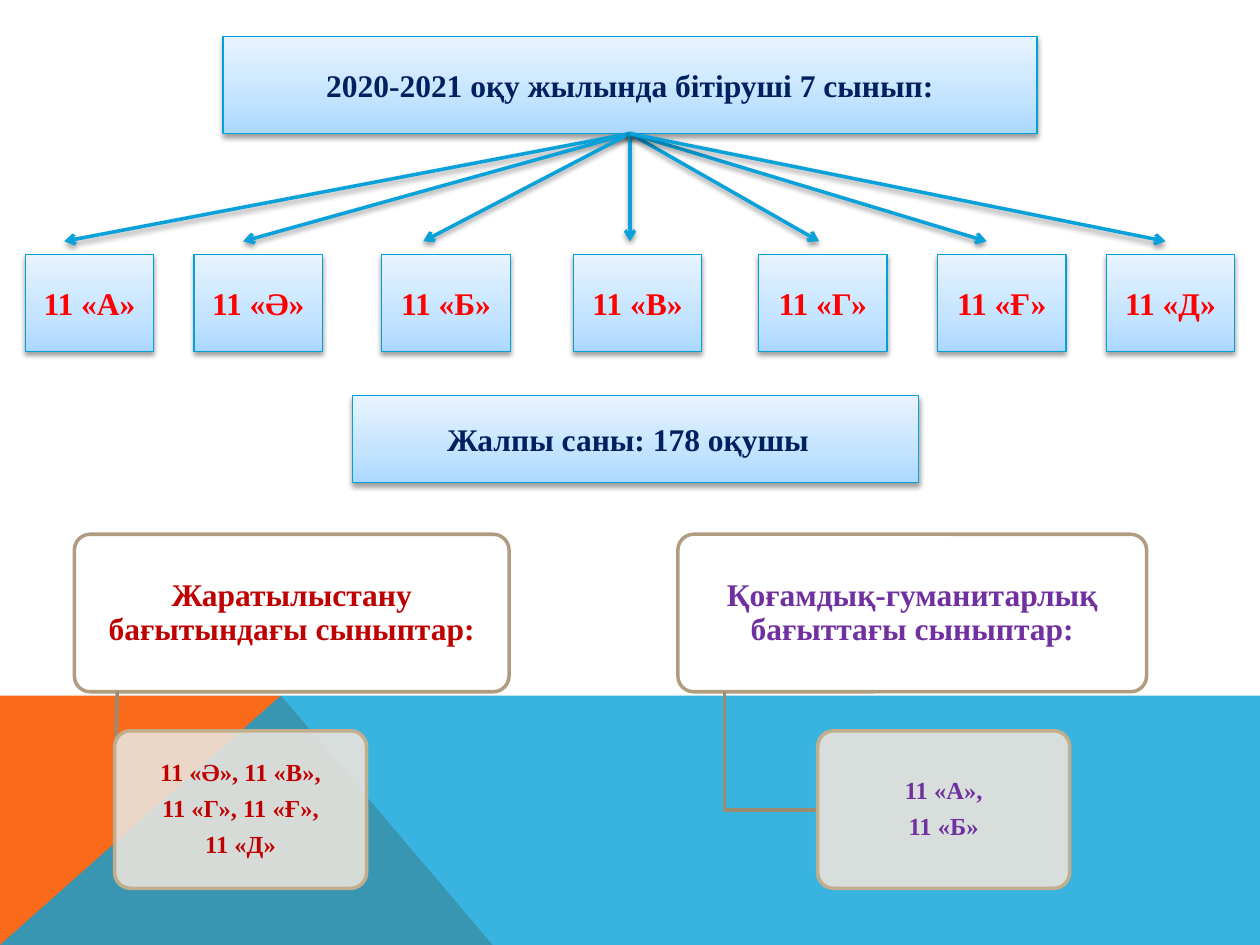
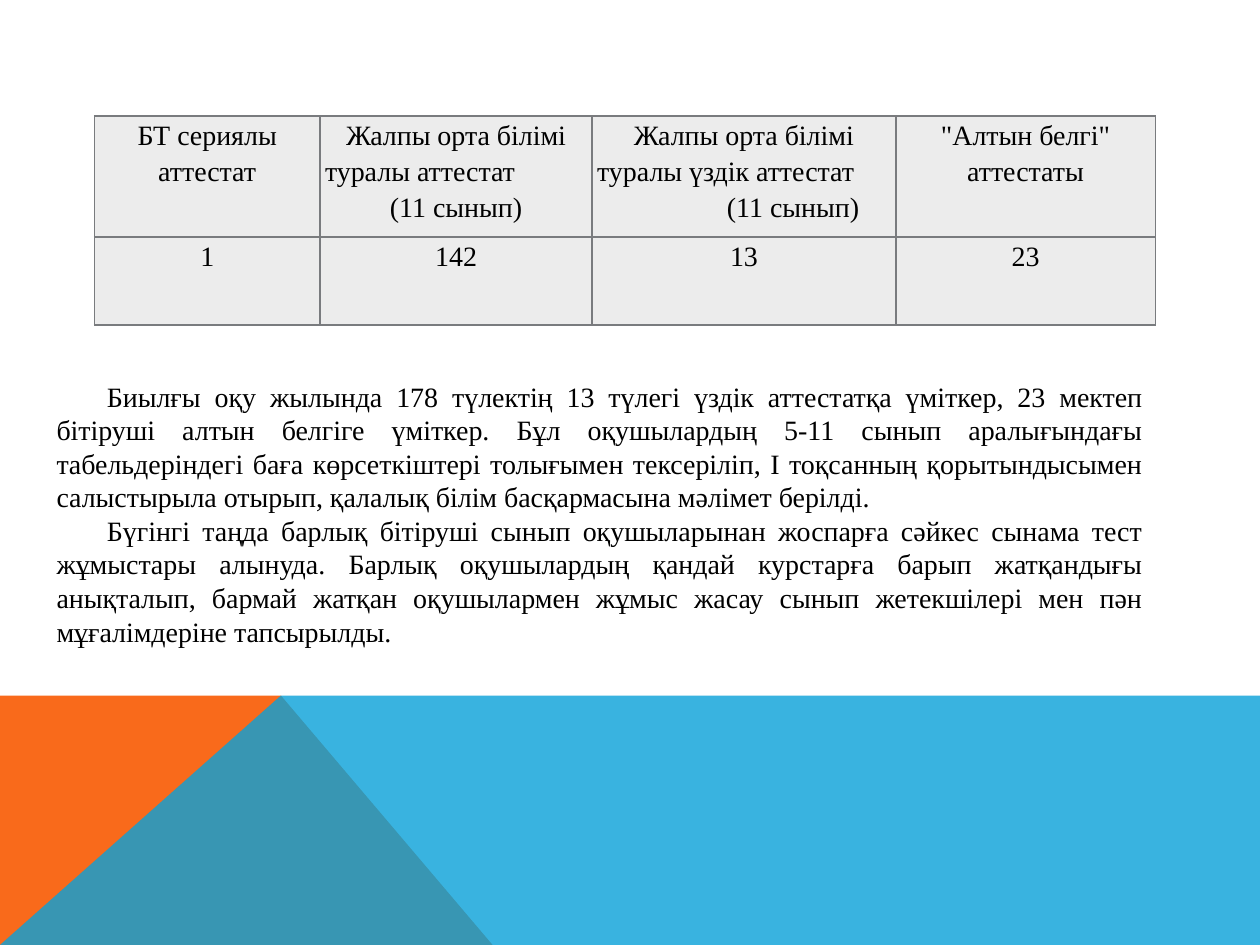
from copy import deepcopy
from dataclasses import dataclass

from lxml.etree import SubElement
from pptx import Presentation
from pptx.dml.color import RGBColor
from pptx.enum.shapes import MSO_CONNECTOR, MSO_SHAPE
from pptx.enum.text import MSO_ANCHOR, MSO_AUTO_SIZE, PP_ALIGN
from pptx.oxml.ns import qn
from pptx.util import Inches, Pt

# Slide size and a grid of 100 columns by 75 square rows
WIDTH, HEIGHT = Inches(10), Inches(7.5)
COLS, ROWS = 100, 75
UNIT = WIDTH / COLS
BAND_TOP = 55.2

FONT = "Times New Roman"
HEX = {
    "orange": "F96A1B", "blue": "08A1D9", "edge": "03A0D9",
    "low": "ABD8FF", "mid": "C3E3FF", "high": "E8F4FF",
    "navy": "002060", "red": "FF0000", "crimson": "C00000",
    "purple": "7030A0", "white": "FFFFFF", "sand": "E9E3DB",
    "tan": "B09D80", "beige": "C2AD8D", "brown": "9B8B71",
    "cell": "ECECEC", "rule": "797B7E", "black": "000000",
}
FADE = [(0, "low"), (0.35, "mid"), (1, "high")]
BOX_FRAME = {"vertical_anchor": MSO_ANCHOR.MIDDLE, "word_wrap": True,
             "auto_size": MSO_AUTO_SIZE.NONE}
TREE_FRAME = BOX_FRAME | {
    f"margin_{side}": Inches(0.04) for side in ("left", "right", "top", "bottom")}
CELL_FRAME = {"margin_left": Inches(0.02), "margin_right": Inches(0.02),
              "margin_top": 0, "margin_bottom": 0}


@dataclass
class Area:
    col: float
    row: float
    wide: float
    high: float

    def emu(self) -> list[int]:
        return [grid(n) for n in (self.col, self.row, self.wide, self.high)]


@dataclass
class Group:
    """A class box and the column its arrow points to."""
    name: str
    col: float
    tip: float


@dataclass
class Branch:
    """A heading box with a smaller box hanging below it."""
    head: str
    items: list[str]
    color: str
    top: Area
    sub: Area
    link: list[tuple[float, float]]


@dataclass
class Line:
    """A table line with its alignment and left indent in columns."""
    text: str
    align: PP_ALIGN = PP_ALIGN.CENTER
    pad: float = 0


GROUPS = [
    Group("А", 2, 5.1), Group("Ә", 15.4, 19.3), Group("Б", 30.3, 33.6),
    Group("В", 45.5, 50), Group("Г", 60.2, 65), Group("Ғ", 74.4, 78.3),
    Group("Д", 87.8, 92.5),
]
BRANCHES = [
    Branch("Жаратылыстану бағытындағы сыныптар:",
           ["11 «Ә», 11 «В»,", "11 «Г», 11 «Ғ»,", "11 «Д»"], "crimson",
           Area(5.9, 42.4, 34.5, 12.5), Area(9.1, 58, 20, 12.5),
           [(9.3, 54.9), (9.1, 64.3)]),
    Branch("Қоғамдық-гуманитарлық бағыттағы сыныптар:",
           ["11 «А»,", "11 «Б»"], "purple",
           Area(53.8, 42.4, 37.2, 12.5), Area(64.9, 58, 20, 12.5),
           [(57.5, 54.9), (57.5, 64.3), (64.9, 64.3)]),
]
LEFT = PP_ALIGN.LEFT
TABLE = [
    [[Line("БТ сериялы аттестат")],
     [Line("Жалпы орта білімі"), Line("туралы аттестат", LEFT, 0.2),
      Line("(11 сынып)")],
     [Line("Жалпы орта білімі"), Line("туралы үздік аттестат", LEFT, 0.2),
      Line("(11 сынып)", pad=7.8)],
     [Line('"Алтын белгі" аттестаты')]],
    [[Line(count)] for count in ("1", "142", "13", "23")],
]
NOTES = [
    "Биылғы оқу жылында 178 түлектің 13 түлегі үздік аттестатқа үміткер, "
    "23 мектеп бітіруші алтын белгіге үміткер. Бұл оқушылардың 5-11 сынып "
    "аралығындағы табельдеріндегі баға көрсеткіштері толығымен тексеріліп, "
    "І тоқсанның қорытындысымен салыстырыла отырып, қалалық білім "
    "басқармасына мәлімет берілді.",
    "Бүгінгі таңда барлық бітіруші сынып оқушыларынан жоспарға сәйкес сынама "
    "тест жұмыстары алынуда. Барлық оқушылардың қандай курстарға барып "
    "жатқандығы анықталып, бармай жатқан оқушылармен жұмыс жасау сынып "
    "жетекшілері мен пән мұғалімдеріне тапсырылды.",
]


# Basic helpers
def grid(count: float) -> int:
    return round(count * UNIT)


def tint(name: str) -> RGBColor:
    return RGBColor.from_string(HEX[name])


def apply(item, values: dict) -> None:
    for key, value in values.items():
        setattr(item, key, value)


def paint(shape, color: str, alpha: int = 100) -> None:
    shape.fill.solid()
    shape.fill.fore_color.rgb = tint(color)
    if alpha < 100:
        mark = shape._element.spPr.find(".//" + qn("a:srgbClr"))
        SubElement(mark, qn("a:alpha"), val=str(alpha * 1000))


def stroke(shape, color: str, width: float) -> None:
    shape.line.color.rgb = tint(color)
    shape.line.width = Pt(width)


def shade(shape) -> None:
    effects = SubElement(shape._element.spPr, qn("a:effectLst"))
    cast = SubElement(effects, qn("a:outerShdw"), blurRad=str(Pt(3.1)),
                      dist=str(Pt(1.6)), dir="5400000", rotWithShape="0")
    color = SubElement(cast, qn("a:srgbClr"), val=HEX["black"])
    SubElement(color, qn("a:alpha"), val="38000")


def write(frame, texts: list[str], size: float, color: str, bold: bool = False,
          align: PP_ALIGN = PP_ALIGN.CENTER, **form) -> None:
    for i, text in enumerate(texts):
        para = frame.add_paragraph() if i else frame.paragraphs[0]
        apply(para, {"alignment": align} | form)
        if i == 0:
            para.space_before = Pt(0)
        run = para.add_run()
        run.text = text
        apply(run.font, {"name": FONT, "size": Pt(size), "bold": bold})
        run.font.color.rgb = tint(color)


def trace(slide, points: list[tuple[float, float]], close: bool):
    start, *rest = [(grid(x), grid(y)) for x, y in points]
    pen = slide.shapes.build_freeform(*start)
    pen.add_line_segments(rest, close=close)
    shape = pen.convert_to_shape()
    shape.shadow.inherit = False
    return shape


# Shared bands at the foot of each slide
def bands(slide) -> None:
    peak = (22.3, BAND_TOP)
    for points, color, alpha in (
        ([(0, ROWS), (0, BAND_TOP), peak, (39.1, ROWS)], "orange", 100),
        ([(0, ROWS), peak, (COLS, BAND_TOP), (COLS, ROWS)], "blue", 80),
    ):
        band = trace(slide, points, True)
        paint(band, color, alpha)
        band.line.fill.background()


# Boxes of the class chart
def block(slide, area: Area, kind=MSO_SHAPE.RECTANGLE):
    return slide.shapes.add_shape(kind, *area.emu())


def glossy(shape, text: str, color: str) -> None:
    shape.fill.gradient()
    shape.fill.gradient_angle = 90
    stop = shape._element.spPr.find(".//" + qn("a:gs"))
    stop.addnext(deepcopy(stop))
    for step, (place, name) in zip(shape.fill.gradient_stops, FADE):
        step.position = place
        step.color.rgb = tint(name)
    stroke(shape, "edge", 0.75)
    shade(shape)
    apply(shape.text_frame, BOX_FRAME)
    write(shape.text_frame, [text], 18, color, True)


def arrow(slide, source, tip: float) -> None:
    line = slide.shapes.add_connector(
        MSO_CONNECTOR.STRAIGHT, grid(50), grid(10.6), grid(tip), grid(19.15))
    line.begin_connect(source, 2)
    stroke(line, "blue", 2)
    SubElement(line._element.spPr.find(qn("a:ln")), qn("a:tailEnd"), type="arrow")
    shade(line)


def node(slide, area: Area, texts: list[str], size: float, color: str,
         fill: str, edge: str, alpha: int = 100) -> None:
    shape = block(slide, area, MSO_SHAPE.ROUNDED_RECTANGLE)
    shape.adjustments[0] = 0.1
    shape.shadow.inherit = False
    paint(shape, fill, alpha)
    stroke(shape, edge, 2)
    apply(shape.text_frame, TREE_FRAME)
    write(shape.text_frame, texts, size, color, True,
          line_spacing=0.9, space_before=Pt(0.4 * size))


def branch(slide, part: Branch) -> None:
    node(slide, part.top, [part.head], 18, part.color, "white", "tan")
    link = trace(slide, part.link, False)
    link.fill.background()
    stroke(link, "brown", 2)
    node(slide, part.sub, part.items, 14, part.color, "sand", "beige", 90)


def classes(deck) -> None:
    slide = deck.slides.add_slide(deck.slide_layouts[5])
    bands(slide)
    # Title box
    title = slide.shapes.title
    place = Area(17.7, 2.9, 64.6, 7.7).emu()
    apply(title, dict(zip(("left", "top", "width", "height"), place)))
    glossy(title, "2020-2021 оқу жылында бітіруші 7 сынып:", "navy")
    # Total
    total = block(slide, Area(28, 31.4, 44.9, 6.9))
    glossy(total, "Жалпы саны: 178 оқушы", "navy")
    total.text_frame.margin_right = grid(2.2)
    # Classes and arrows
    for group in GROUPS:
        box = block(slide, Area(group.col, 20.2, 10.2, 7.7))
        glossy(box, f"11 «{group.name}»", "red")
        arrow(slide, title, group.tip)
    for part in BRANCHES:
        branch(slide, part)


# Certificate table
def border(cell) -> None:
    props = cell._tc.get_or_add_tcPr()
    for side in "LRTB":
        line = SubElement(props, qn(f"a:ln{side}"), w=str(Pt(1)))
        fill = SubElement(line, qn("a:solidFill"))
        SubElement(fill, qn("a:srgbClr"), val=HEX["rule"])


def fill_cell(cell, lines: list[Line]) -> None:
    border(cell)
    cell.fill.solid()
    cell.fill.fore_color.rgb = tint("cell")
    apply(cell, CELL_FRAME)
    frame = cell.text_frame
    write(frame, [line.text for line in lines], 16, "black", line_spacing=1.15)
    for para, line in zip(frame.paragraphs, lines):
        para.alignment = line.align
        para._p.get_or_add_pPr().set("marL", str(grid(line.pad)))


def awards(deck) -> None:
    slide = deck.slides.add_slide(deck.slide_layouts[6])
    bands(slide)
    area = Area(7.5, 9.2, 84.2, 16.6)
    table = slide.shapes.add_table(2, 4, *area.emu()).table
    apply(table, {"first_row": False, "horz_banding": False})
    for column, wide in zip(table.columns, (17.9, 21.6, 24.1, 20.6)):
        column.width = grid(wide)
    for row, high, texts in zip(table.rows, (9.6, 7), TABLE):
        row.height = grid(high)
        for cell, lines in zip(row.cells, texts):
            fill_cell(cell, lines)
    # Commentary
    frame = slide.shapes.add_textbox(*Area(3.5, 29.6, 88.2, 22.6).emu()).text_frame
    apply(frame, {"word_wrap": True, "auto_size": MSO_AUTO_SIZE.SHAPE_TO_FIT_TEXT})
    write(frame, NOTES, 16, "black", align=PP_ALIGN.JUSTIFY)
    for para in frame.paragraphs:
        para._p.get_or_add_pPr().set("indent", str(grid(4)))


def main() -> None:
    deck = Presentation()
    apply(deck, {"slide_width": WIDTH, "slide_height": HEIGHT})
    classes(deck)
    awards(deck)
    deck.save("out.pptx")


if __name__ == "__main__":
    main()
